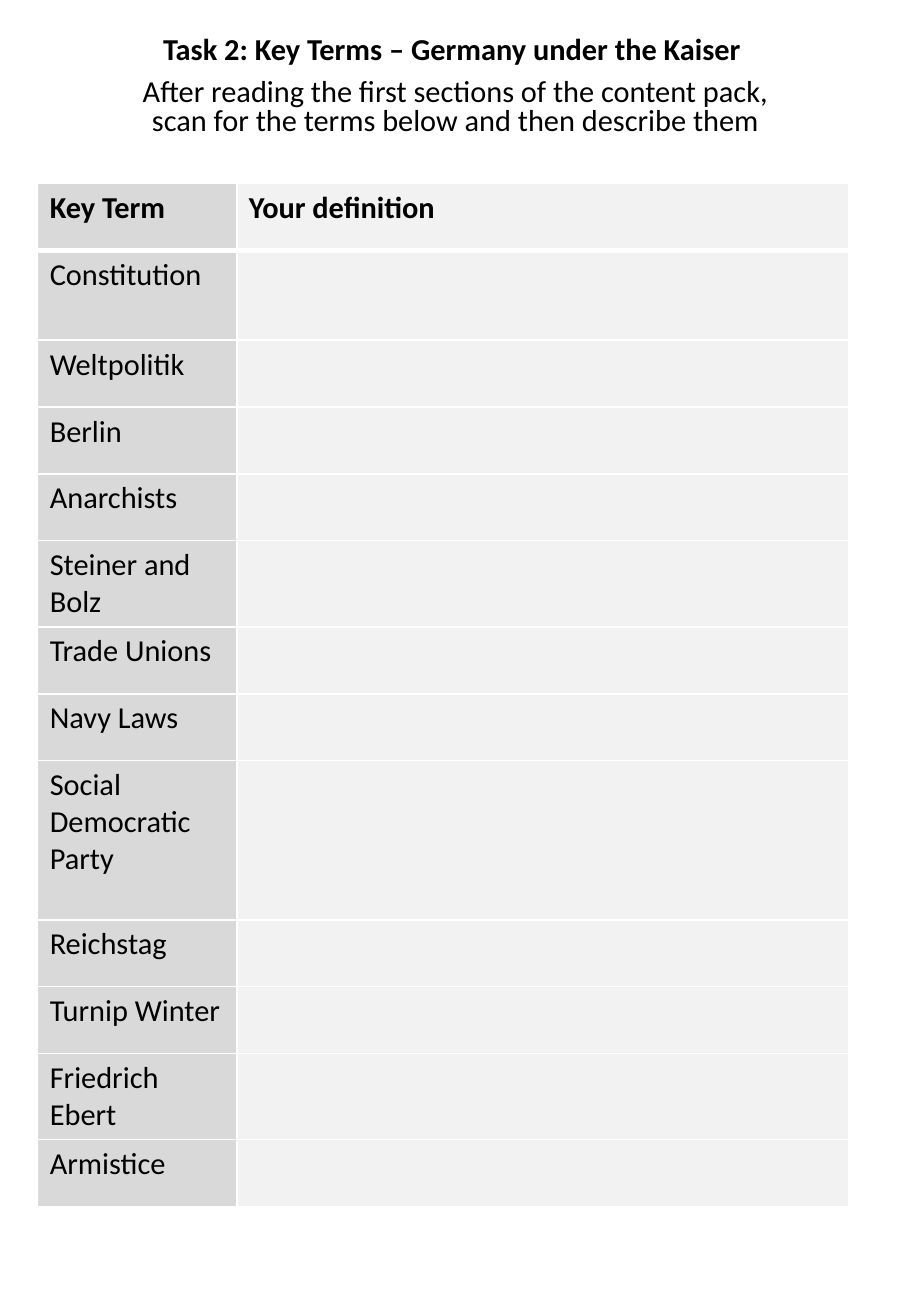
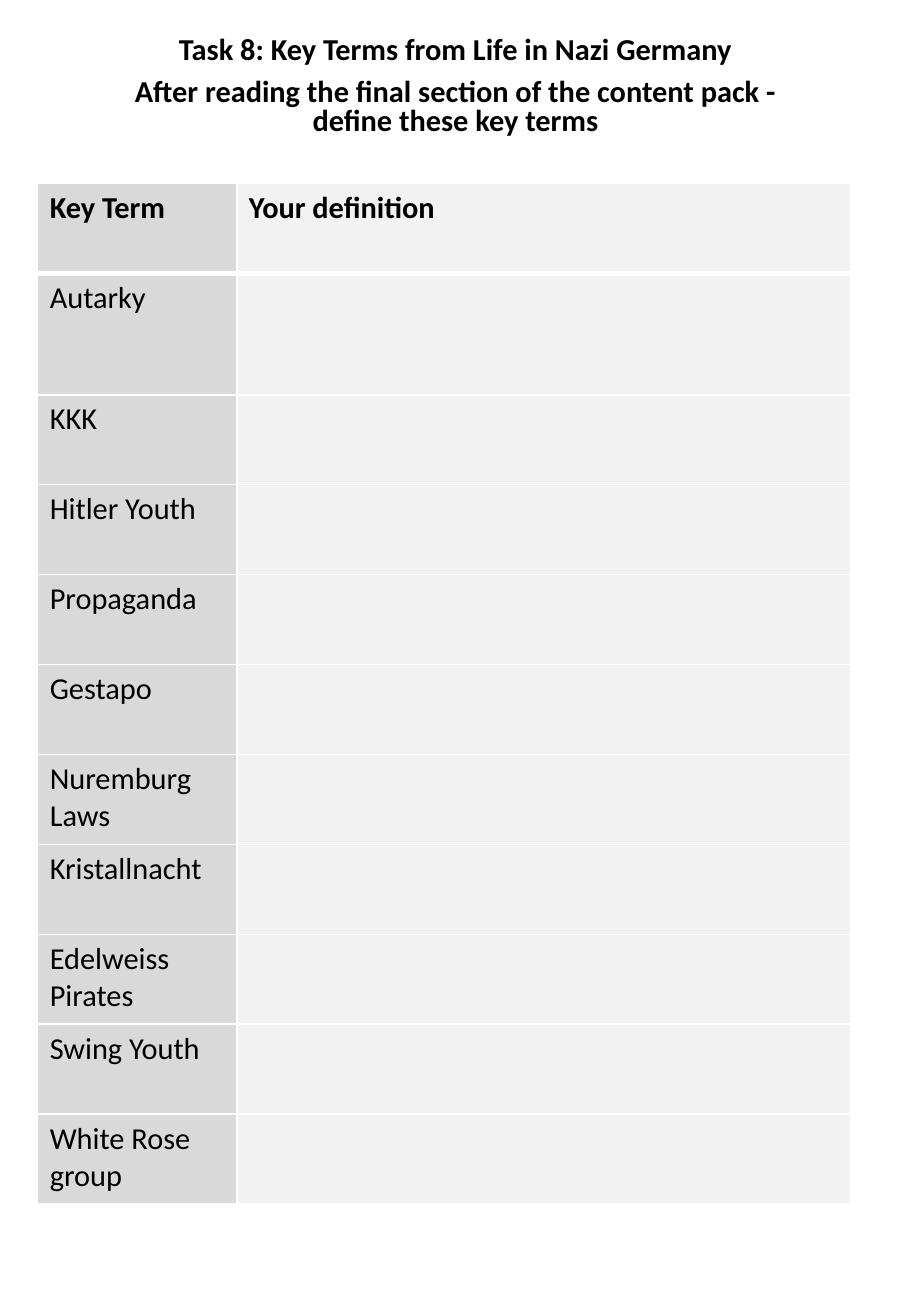
from dataclasses import dataclass

from lxml import etree
from pptx import Presentation
from pptx.dml.color import RGBColor
from pptx.enum.text import PP_ALIGN
from pptx.oxml.ns import qn
from pptx.slide import Slide
from pptx.table import _Cell
from pptx.text.text import _Paragraph
from pptx.util import Inches, Pt

CENTER = PP_ALIGN.CENTER
FONT = "Calibri"
TEXT_SIZE = 18
BLACK = "000000"
WHITE = "FFFFFF"
TERM_FILL = "D9D9D9"
DEFINITION_FILL = "F2F2F2"
TERM_WIDTH = 1.64
HEADINGS = ("Key Term", "Your definition")
THIN = 1
THICK = 3


@dataclass(frozen=True)
class Worksheet:
    title: str
    instruction: str
    instruction_bold: bool
    definition_width: float
    row_height: float
    first_term_height: float
    terms: tuple[str, ...]
    special_heights: dict[str, float]


WORKSHEETS = (
    Worksheet(
        "Task 2: Key Terms – Germany under the Kaiser ",
        "After reading the first sections of the content pack, "
        "scan for the terms below and then describe them",
        False, 5.04, 0.55, 0.74,
        ("Constitution", "Weltpolitik", "Berlin", "Anarchists",
         "Steiner and Bolz", "Trade Unions", "Navy Laws",
         "Social Democratic Party", "Reichstag", "Turnip Winter",
         "Friedrich Ebert", "Armistice"),
        {"Steiner and Bolz": 0.71, "Social Democratic Party": 1.31,
         "Friedrich Ebert": 0.71},
    ),
    Worksheet(
        "Task 8: Key Terms from Life in Nazi Germany",
        "After reading the final section of the content pack - "
        "define these key terms",
        True, 5.05, 0.74, 1,
        ("Autarky", "KKK", "Hitler Youth", "Propaganda", "Gestapo",
         "Nuremburg Laws", "Kristallnacht", "Edelweiss Pirates",
         "Swing Youth", "White Rose group"),
        {},
    ),
)


def color(value: str) -> RGBColor:
    return RGBColor.from_string(value)


def format_runs(paragraph: _Paragraph, bold: bool) -> None:
    for run in paragraph.runs:
        run.font.name = FONT
        run.font.size = Pt(TEXT_SIZE)
        run.font.bold = bold
        run.font.color.rgb = color(BLACK)


def add_heading(slide: Slide, worksheet: Worksheet) -> None:
    shape = slide.shapes.add_textbox(
        Inches(0.94), Inches(0.26), Inches(5.62), Inches(1.01))
    text_frame = shape.text_frame
    text_frame.word_wrap = True
    text_frame.text = f"{worksheet.title}\n{worksheet.instruction}"
    weights = (True, worksheet.instruction_bold)
    for paragraph, bold in zip(text_frame.paragraphs, weights):
        paragraph.alignment = CENTER
        paragraph.line_spacing = 0.8
        paragraph.space_before = Pt(7.5)
        format_runs(paragraph, bold)


def set_borders(cell: _Cell, top: float, bottom: float) -> None:
    properties = cell._tc.get_or_add_tcPr()
    widths = {"lnL": THIN, "lnR": THIN, "lnT": top, "lnB": bottom}
    for side, width in widths.items():
        line = etree.SubElement(properties, qn(f"a:{side}"), w=str(Pt(width)))
        fill = etree.SubElement(line, qn("a:solidFill"))
        etree.SubElement(fill, qn("a:srgbClr"), val=WHITE)


def add_term_table(slide: Slide, worksheet: Worksheet) -> None:
    rows = [HEADINGS] + [(term, "") for term in worksheet.terms]
    heights = [worksheet.row_height, worksheet.first_term_height]
    heights += [worksheet.special_heights.get(term, worksheet.row_height)
                for term in worksheet.terms[1:]]
    widths = (TERM_WIDTH, worksheet.definition_width)
    table = slide.shapes.add_table(
        len(rows), len(widths), Inches(0.31), Inches(1.51),
        Inches(sum(widths)), Inches(sum(heights))).table
    table.first_row = False
    table.horz_banding = False
    for column, width in zip(table.columns, widths):
        column.width = Inches(width)
    for row_index, (texts, height) in enumerate(zip(rows, heights)):
        table.rows[row_index].height = Inches(height)
        top = THICK if row_index == 1 else THIN
        bottom = THICK if row_index == 0 else THIN
        fills = (TERM_FILL, DEFINITION_FILL)
        for column_index, (text, fill) in enumerate(zip(texts, fills)):
            cell = table.cell(row_index, column_index)
            set_borders(cell, top, bottom)
            cell.fill.solid()
            cell.fill.fore_color.rgb = color(fill)
            if text:
                cell.text_frame.text = text
                format_runs(cell.text_frame.paragraphs[0], row_index == 0)


def main() -> None:
    """Build the key term worksheets and save the presentation."""
    presentation = Presentation()
    presentation.slide_width = Inches(7.5)
    presentation.slide_height = Inches(10.83)
    blank_layout = presentation.slide_layouts[6]
    for worksheet in WORKSHEETS:
        slide = presentation.slides.add_slide(blank_layout)
        add_heading(slide, worksheet)
        add_term_table(slide, worksheet)
    presentation.save("out.pptx")


if __name__ == "__main__":
    main()
